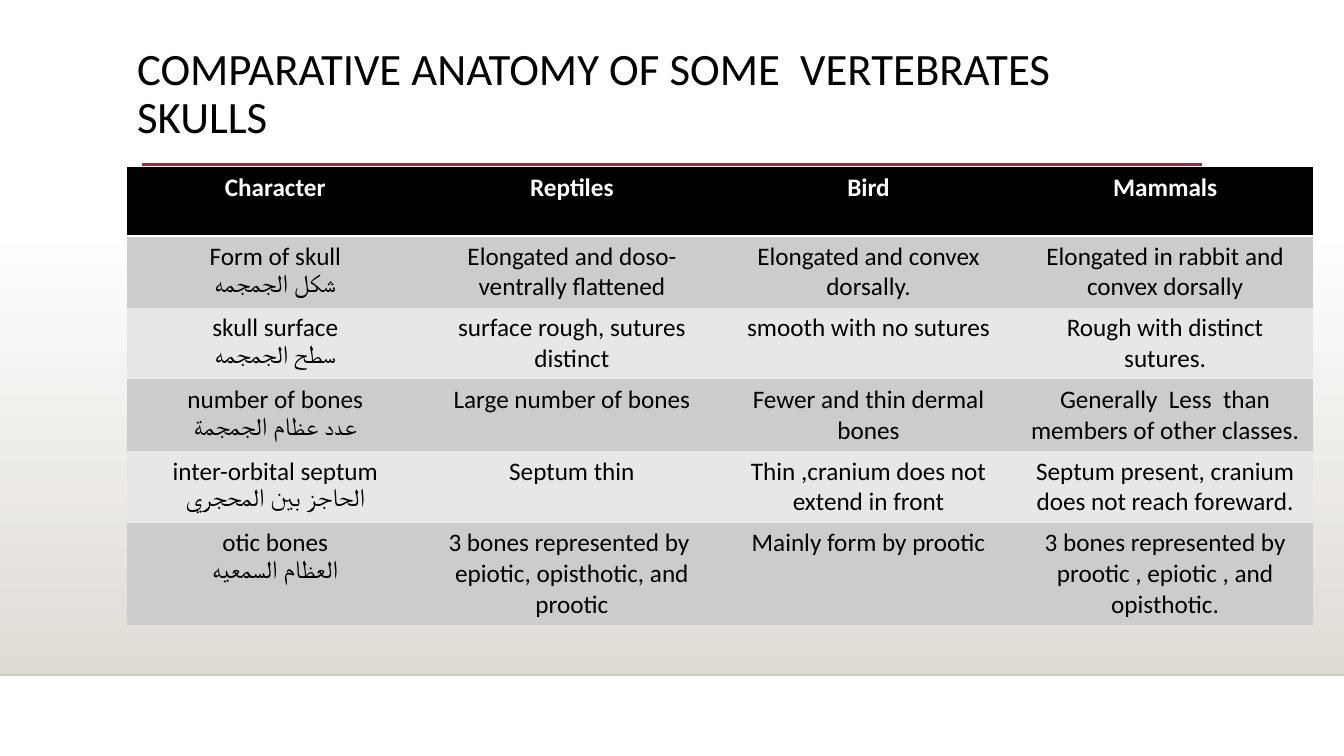
from lxml import etree
from pptx import Presentation
from pptx import util as u
from pptx.dml.color import RGBColor
from pptx.enum import shapes, text
from pptx.oxml import ns

Cm, Pt = u.Cm, u.Pt
WIDTH, HEIGHT = 33.87, 19.05


def rgb(value):
    return RGBColor.from_string(value)


class SlideBuilder:
    font = "Calibri"
    ink, white, accent, sand = "000000", "FFFFFF", "B71E42", "DFDBD5"
    bands = ("CCCCCC", "E7E7E7")
    plain_table = "{2D5ABB26-0587-4C30-8999-92F81FD0307C}"

    def __init__(self, prs):
        self.s = prs.slides.add_slide(prs.slide_layouts[5])

    def style(self, p, size, color, align, bold=False):
        p.alignment = align
        for r in p.runs:
            r.font.name, r.font.size, r.font.bold = self.font, Pt(size), bold
            r.font.color.rgb = rgb(color)

    def title(self, content, x, y, w, h):
        sp = self.s.shapes.title
        sp.left, sp.top, sp.width, sp.height = Cm(x), Cm(y), Cm(w), Cm(h)
        tf = sp.text_frame
        tf.text = content
        tf.word_wrap = True
        tf.auto_size = text.MSO_AUTO_SIZE.NONE
        tf.vertical_anchor = text.MSO_ANCHOR.TOP
        p = tf.paragraphs[0]
        p.line_spacing = 0.9
        self.style(p, 32, self.ink, text.PP_ALIGN.LEFT)

    def gradient(self, x, y, w, h):
        sp = self.s.shapes.add_shape(
            shapes.MSO_SHAPE.RECTANGLE, Cm(x), Cm(y), Cm(w), Cm(h))
        sp.shadow.inherit = False
        sp.line.fill.background()
        sp.fill.gradient()
        sp.fill.gradient_angle = 270
        for stop, color in zip(sp.fill.gradient_stops, (self.white, self.sand)):
            stop.color.rgb = rgb(color)

    def rule(self, x1, x2, y, color, width, alpha=None):
        line = self.s.shapes.add_connector(
            shapes.MSO_CONNECTOR.STRAIGHT, Cm(x1), Cm(y), Cm(x2), Cm(y))
        line.line.color.rgb = rgb(color)
        line.line.width = Pt(width)
        sp_pr = line._element.spPr
        if alpha:
            clr = sp_pr.find(".//" + ns.qn("a:srgbClr"))
            etree.SubElement(clr, ns.qn("a:alpha"), val=str(alpha * 1000))
        etree.SubElement(sp_pr, ns.qn("a:effectLst"))

    def bottom_border(self, cell, color, width):
        ln = etree.Element(ns.qn("a:lnB"), w=str(Pt(width)))
        fill = etree.SubElement(ln, ns.qn("a:solidFill"))
        etree.SubElement(fill, ns.qn("a:srgbClr"), val=color)
        cell._tc.get_or_add_tcPr().insert(0, ln)

    def table(self, rows, x, y, w, row_h):
        frame = self.s.shapes.add_table(
            len(rows), len(rows[0]), Cm(x), Cm(y), Cm(w), Cm(row_h * len(rows)))
        table = frame.table
        table._tbl.tblPr.find(ns.qn("a:tableStyleId")).text = self.plain_table
        for i, row in enumerate(rows):
            header = i == 0
            for j, content in enumerate(row):
                cell = table.cell(i, j)
                cell.text = content
                cell.fill.solid()
                cell.fill.fore_color.rgb = rgb(
                    self.ink if header else self.bands[(i - 1) % 2])
                if header:
                    self.bottom_border(cell, self.white, 2)
                for p in cell.text_frame.paragraphs:
                    self.style(p, 18, self.white if header else self.ink,
                               text.PP_ALIGN.CENTER, header)


ROWS = [
    ("Character", "Reptiles", "Bird", "Mammals"),
    ("Form of skull\nشكل الجمجمه", "Elongated and doso-ventrally flattened",
     "Elongated and convex dorsally.", "Elongated in rabbit and convex dorsally"),
    ("skull surface\nسطح الجمجمه", "surface rough, sutures distinct",
     "smooth with no sutures", "Rough with distinct sutures."),
    ("number of bones\nعدد عظام الجمجمة", "Large number of bones",
     "Fewer and thin dermal bones",
     "Generally  Less  than members of other classes."),
    ("inter-orbital septum\nالحاجز بين المحجري", "Septum thin",
     "Thin ,cranium does not extend in front",
     "Septum present, cranium does not reach foreward."),
    ("otic bones\nالعظام السمعيه",
     "3 bones represented by  epiotic, opisthotic, and prootic",
     "Mainly form by prootic",
     "3 bones represented by prootic , epiotic , and opisthotic."),
]


def main():
    prs = Presentation()
    prs.slide_width, prs.slide_height = Cm(WIDTH), Cm(HEIGHT)
    slide = SlideBuilder(prs)

    # Background band and its lower edge
    slide.gradient(0, 5.61, WIDTH, 11.41)
    slide.rule(0, WIDTH, 17.02, "000001", 1, alpha=20)

    # Title with the accent rule
    slide.title("COMPARATIVE ANATOMY OF SOME  VERTEBRATES SKULLS",
                3.2, 1.04, 26.67, 2.92)
    slide.rule(3.58, 30.28, 4.14, slide.accent, 2.5)

    # Comparison table
    slide.table(ROWS, 3.2, 4.22, 29.9, 1.73)

    prs.save("out.pptx")


if __name__ == "__main__":
    main()
